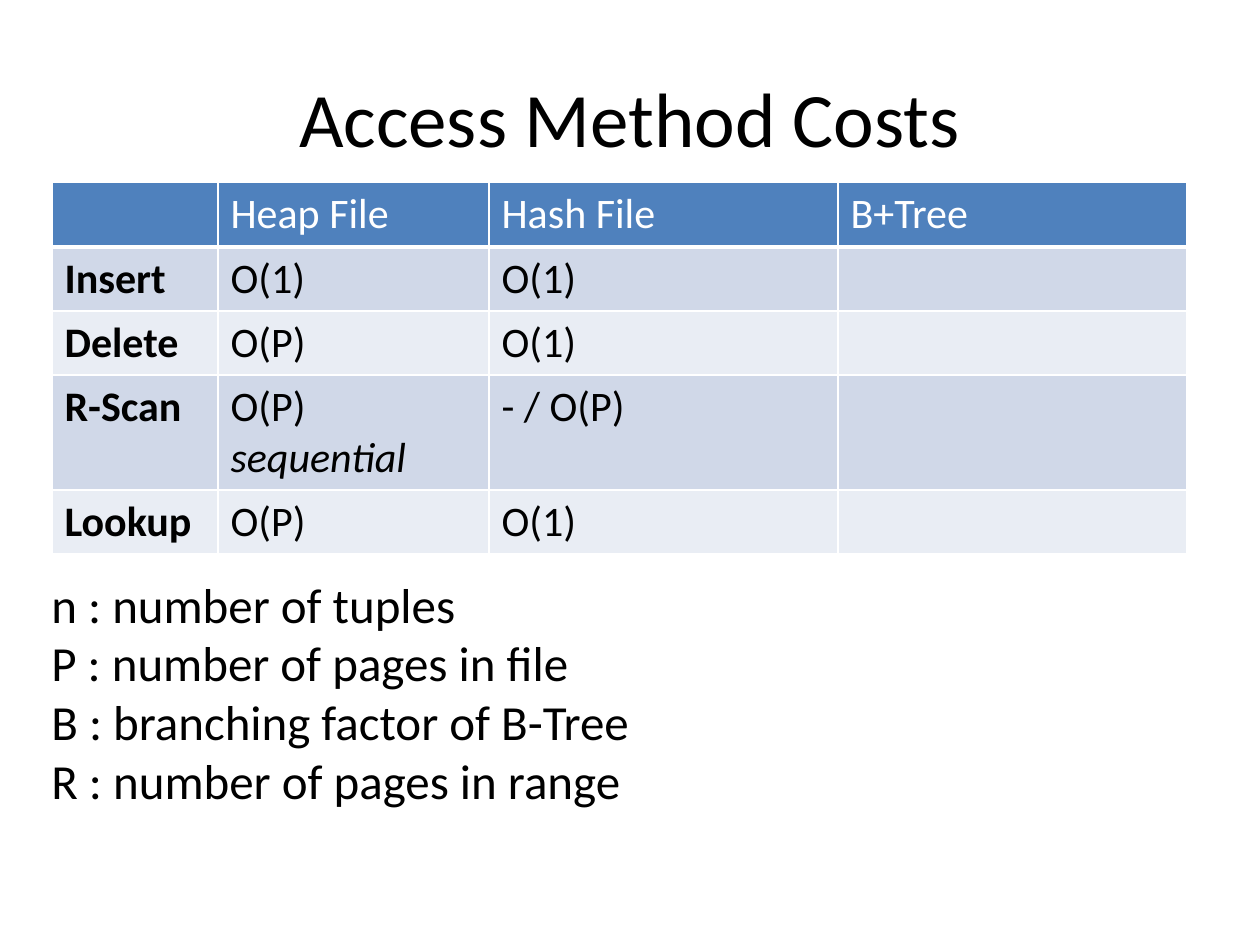
from lxml import etree
from pptx import Presentation
from pptx.dml.color import RGBColor
from pptx.enum.text import MSO_ANCHOR, PP_ALIGN
from pptx.oxml.ns import qn
from pptx.util import Emu, Pt

MIDDLE = MSO_ANCHOR.MIDDLE
CENTER = PP_ALIGN.CENTER

PX_PER_INCH = 126
FONT = "Calibri"
COLORS = {
    "text": "000000",
    "white": "FFFFFF",
    "header": "4F81BD",
    "band_dark": "D0D8E8",
    "band_light": "E9EDF4",
}

COL_WIDTHS = [166, 271, 349, 349]
ROW_HEIGHTS = [65, 64, 64, 115, 64]
# Each cell is a list of runs; a second run is set in italics
COSTS = [
    [[], ["Heap File"], ["Hash File"], ["B+Tree"]],
    [["Insert"], ["O(1)"], ["O(1)"], []],
    [["Delete"], ["O(P)"], ["O(1)"], []],
    [["R-Scan"], ["O(P) ", "sequential"], ["- / O(P)"], []],
    [["Lookup"], ["O(P)"], ["O(1)"], []],
]
LEGEND = [
    "n : number of tuples",
    "P : number of pages in file",
    "B : branching factor of B-Tree",
    "R : number of pages in range",
]


def px(n):
    return Emu(round(n * 914400 / PX_PER_INCH))


def color(name):
    return RGBColor.from_string(COLORS[name])


def format_run(r, size, color_name="text", bold=False, italic=False):
    r.font.name = FONT
    r.font.size = Pt(size)
    r.font.color.rgb = color(color_name)
    r.font.bold = bold
    r.font.italic = italic


def add_text(s, box, lines, size, align=None, anchor=None):
    tf = s.shapes.add_textbox(*map(px, box)).text_frame
    tf.word_wrap = True
    tf.vertical_anchor = anchor
    tf.text = "\n".join(lines)
    for p in tf.paragraphs:
        p.alignment = align
        for r in p.runs:
            format_run(r, size)


def set_borders(cell, bottom):
    """Draw white cell borders; the border elements come before the fill."""
    tc_pr = cell._tc.get_or_add_tcPr()
    widths = {"a:lnL": 1, "a:lnR": 1, "a:lnT": 1, "a:lnB": bottom}
    for i, (tag, width) in enumerate(widths.items()):
        ln = etree.Element(qn(tag), w=str(Pt(width)))
        fill = etree.SubElement(ln, qn("a:solidFill"))
        etree.SubElement(fill, qn("a:srgbClr"), val=COLORS["white"])
        tc_pr.insert(i, ln)


def add_cost_table(s, left, top):
    size = sum(COL_WIDTHS), sum(ROW_HEIGHTS)
    table = s.shapes.add_table(
        len(COSTS), len(COL_WIDTHS), *map(px, (left, top, *size))
    ).table
    for column, width in zip(table.columns, COL_WIDTHS):
        column.width = px(width)
    for i, (row, height) in enumerate(zip(table.rows, ROW_HEIGHTS)):
        row.height = px(height)
        header = i == 0
        band = "header" if header else "band_dark" if i % 2 else "band_light"
        for j, cell in enumerate(row.cells):
            cell.fill.solid()
            cell.fill.fore_color.rgb = color(band)
            set_borders(cell, bottom=3 if header else 1)
            p = cell.text_frame.paragraphs[0]
            for k, text in enumerate(COSTS[i][j]):
                r = p.add_run()
                r.text = text
                format_run(r, 24, "white" if header else "text",
                           bold=j == 0, italic=k == 1)


def main():
    prs = Presentation()
    prs.slide_width, prs.slide_height = px(1260), px(945)
    s = prs.slides.add_slide(prs.slide_layouts[6])

    # Title
    add_text(s, (63, 38, 1134, 158), ["Access Method Costs"], 44, CENTER, MIDDLE)
    # Costs by access method
    add_cost_table(s, 52, 182)
    # Legend of symbols
    add_text(s, (39, 568, 809, 251), LEGEND, 28)

    prs.save("out.pptx")


if __name__ == "__main__":
    main()
